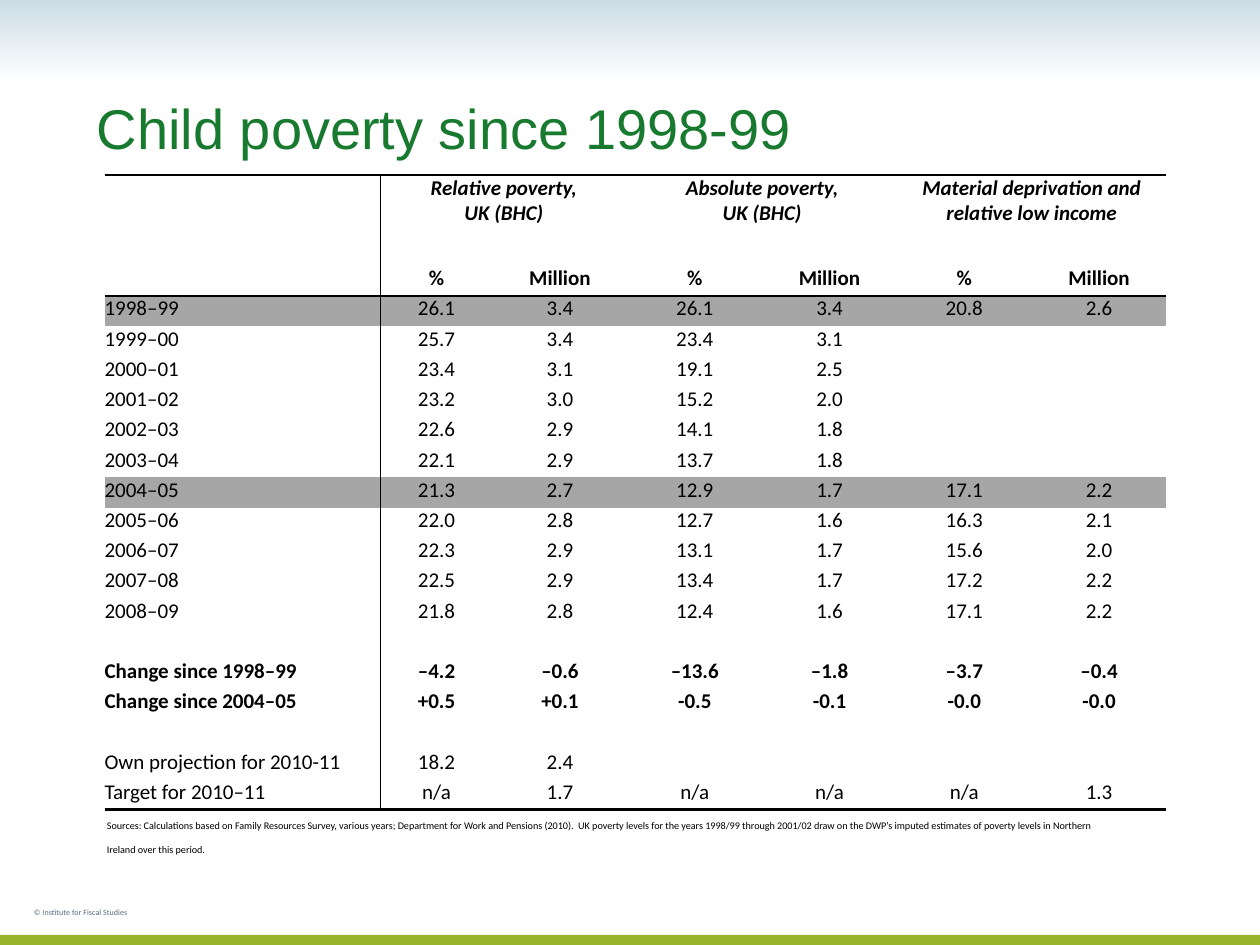
from dataclasses import dataclass
from typing import Optional

from lxml.etree import SubElement
from pptx import Presentation
from pptx.dml.color import RGBColor
from pptx.enum.shapes import MSO_SHAPE as Preset
from pptx.enum.text import MSO_ANCHOR as Anchor, PP_ALIGN as Align
from pptx.oxml import parse_xml
from pptx.oxml.ns import nsdecls, qn
from pptx.util import Inches, Pt


@dataclass(frozen=True)
class Theme:
    sky: str = "CCDDE6"
    white: str = "FFFFFF"
    lime: str = "97B32C"
    green: str = "187A2E"
    slate: str = "526D7F"
    black: str = "000000"
    grey: str = "A6A6A6"
    heading_font: str = "Arial"
    body_font: str = "Calibri"
    title_size: int = 32
    table_size: int = 12
    source_size: int = 10
    footer_size: int = 8
    thin: float = 1
    thick: float = 1.5


@dataclass(frozen=True)
class Row:
    label: str
    values: str = ""
    bold: bool = False
    shaded: bool = False


@dataclass(frozen=True)
class Caption:
    text: str
    box: tuple[float, float, float, float]
    size: int
    color: str
    font: str = "Calibri"
    anchor: Anchor = Anchor.TOP
    line_spacing: Optional[float] = None
    baseline: Optional[int] = None


THEME = Theme()
NO_STYLE = "{2D5ABB26-0587-4C30-8999-92F81FD0307C}"
COLUMN_WIDTHS = [2.19, 0.89] + [1.07] * 5
HEADER_HEIGHT, ROW_HEIGHT = 0.72, 0.24

MEASURES = ["Relative poverty,\vUK (BHC)", "Absolute poverty,\vUK (BHC)",
            "Material deprivation and relative low income"]
ROWS = [
    Row("", "% Million % Million % Million", bold=True),
    Row("1998–99", "26.1 3.4 26.1 3.4 20.8 2.6", shaded=True),
    Row("1999–00", "25.7 3.4 23.4 3.1"),
    Row("2000–01", "23.4 3.1 19.1 2.5"),
    Row("2001–02", "23.2 3.0 15.2 2.0"),
    Row("2002–03", "22.6 2.9 14.1 1.8"),
    Row("2003–04", "22.1 2.9 13.7 1.8"),
    Row("2004–05", "21.3 2.7 12.9 1.7 17.1 2.2", shaded=True),
    Row("2005–06", "22.0 2.8 12.7 1.6 16.3 2.1"),
    Row("2006–07", "22.3 2.9 13.1 1.7 15.6 2.0"),
    Row("2007–08", "22.5 2.9 13.4 1.7 17.2 2.2"),
    Row("2008–09", "21.8 2.8 12.4 1.6 17.1 2.2"),
    Row(""),
    Row("Change since 1998–99", "–4.2 –0.6 –13.6 –1.8 –3.7 –0.4", bold=True),
    Row("Change since 2004–05", "+0.5 +0.1 -0.5 -0.1 -0.0 -0.0", bold=True),
    Row(""),
    Row("Own projection for 2010-11", "18.2 2.4"),
    Row("Target for 2010–11", "n/a 1.7 n/a n/a n/a 1.3"),
]
CAPTIONS = [
    Caption("© Institute for Fiscal Studies", (0.17, 7.08, 2.75, 0.25),
            THEME.footer_size, THEME.slate, baseline=-25000),
    Caption("Child poverty since 1998-99", (0.67, 0.25, 9.06, 1.08),
            THEME.title_size, THEME.green, THEME.heading_font,
            Anchor.BOTTOM, line_spacing=0.9),
    Caption("Sources: Calculations based on Family Resources Survey, various years; "
            "Department for Work and Pensions (2010).  UK poverty levels for the years "
            "1998/99 through 2001/02 draw on the DWP’s imputed estimates of poverty "
            "levels in Northern Ireland over this period.", (0.75, 6.38, 8.19, 0.44),
            THEME.source_size, THEME.black, anchor=Anchor.MIDDLE, baseline=-25000),
]


def write(frame, text: str, *, size: int, color: str, font: str = THEME.body_font,
          bold: bool = False, italic: bool = False, align: Align = Align.LEFT,
          line_spacing: Optional[float] = None, space_after: Optional[float] = None,
          baseline: Optional[int] = None) -> None:
    frame.word_wrap = True
    paragraph = frame.paragraphs[0]
    paragraph.text = text
    paragraph.alignment = align
    if line_spacing is not None:
        paragraph.line_spacing = line_spacing
    if space_after is not None:
        paragraph.space_after = Pt(space_after)
    for run in paragraph.runs:
        run.font.size, run.font.name = Pt(size), font
        run.font.bold, run.font.italic = bold, italic
        run.font.color.rgb = RGBColor.from_string(color)
        if baseline is not None:
            run._r.get_or_add_rPr().set("baseline", str(baseline))
    for line_break in paragraph._p.findall(qn("a:br")):
        SubElement(line_break, qn("a:rPr")).set("sz", str(size * 100))
    if not text:
        SubElement(paragraph._p, qn("a:endParaRPr")).set("sz", str(size * 100))


def add_band(slide, top: float, height: float):
    band = slide.shapes.add_shape(Preset.RECTANGLE, 0, Inches(top), Inches(10), Inches(height))
    band.shadow.inherit = False
    band.line.fill.background()
    return band


def add_caption(slide, caption: Caption) -> None:
    frame = slide.shapes.add_textbox(*map(Inches, caption.box)).text_frame
    frame.vertical_anchor = caption.anchor
    write(frame, caption.text, size=caption.size, color=caption.color, font=caption.font,
          line_spacing=caption.line_spacing, baseline=caption.baseline)


def set_borders(cell, widths: dict[str, float]) -> None:
    solid = f'<a:solidFill><a:srgbClr val="{THEME.black}"/></a:solidFill>'
    for position, (side, width) in enumerate(widths.items()):
        cell._tc.get_or_add_tcPr().insert(position, parse_xml(
            f'<a:ln{side} {nsdecls("a")} w="{Pt(width)}">'
            f'{solid if width else "<a:noFill/>"}</a:ln{side}>'))


def borders_at(row: int, column: int) -> dict[str, float]:
    return {
        "L": THEME.thin if column == 1 else 0,
        "R": THEME.thin if column == 0 else 0,
        "T": {0: THEME.thick, 2: THEME.thin}.get(row, 0),
        "B": {1: THEME.thin, len(ROWS): THEME.thick}.get(row, 0),
    }


def fill_cell(cell, text: str, row: int, column: int, *, bold: bool = False,
              italic: bool = False, shaded: bool = False) -> None:
    cell.margin_left = cell.margin_right = cell.margin_top = cell.margin_bottom = 0
    if shaded:
        cell.fill.solid()
        cell.fill.fore_color.rgb = RGBColor.from_string(THEME.grey)
    else:
        cell.fill.background()
    set_borders(cell, borders_at(row, column))
    write(cell.text_frame, text, size=THEME.table_size, color=THEME.black, bold=bold,
          italic=italic, align=Align.CENTER if column else Align.LEFT, space_after=3)


def add_poverty_table(slide) -> None:
    height = HEADER_HEIGHT + ROW_HEIGHT * len(ROWS)
    table = slide.shapes.add_table(
        len(ROWS) + 1, len(COLUMN_WIDTHS), Inches(0.83), Inches(1.39),
        Inches(sum(COLUMN_WIDTHS)), Inches(height)).table
    table.first_row = table.horz_banding = False
    table._tbl.tblPr.find(qn("a:tableStyleId")).text = NO_STYLE
    for column, width in zip(table.columns, COLUMN_WIDTHS):
        column.width = Inches(width)
    for index, row in enumerate(table.rows):
        row.height = Inches(ROW_HEIGHT if index else HEADER_HEIGHT)

    headings = [""] + [text for measure in MEASURES for text in (measure, "")]
    for column, heading in enumerate(headings):
        fill_cell(table.cell(0, column), heading, 0, column, bold=True, italic=True)
    for column in range(1, len(COLUMN_WIDTHS), 2):
        table.cell(0, column).merge(table.cell(0, column + 1))
    for index, row in enumerate(ROWS, start=1):
        values = row.values.split()
        blanks = [""] * (len(COLUMN_WIDTHS) - 1 - len(values))
        for column, text in enumerate([row.label, *values, *blanks]):
            fill_cell(table.cell(index, column), text, index, column,
                      bold=row.bold, shaded=row.shaded)


def main() -> None:
    deck = Presentation()
    deck.slide_width, deck.slide_height = Inches(10), Inches(7.5)
    slide = deck.slides.add_slide(deck.slide_layouts[6])

    header = add_band(slide, 0, 0.67)
    header.fill.gradient()
    header.fill.gradient_angle = 270
    for stop, color, position in zip(header.fill.gradient_stops, (THEME.sky, THEME.white), (0, 1)):
        stop.color.rgb = RGBColor.from_string(color)
        stop.position = position
    footer = add_band(slide, 7.42, 0.08)
    footer.fill.solid()
    footer.fill.fore_color.rgb = RGBColor.from_string(THEME.lime)

    add_poverty_table(slide)
    for caption in CAPTIONS:
        add_caption(slide, caption)
    deck.save("out.pptx")


if __name__ == "__main__":
    main()
